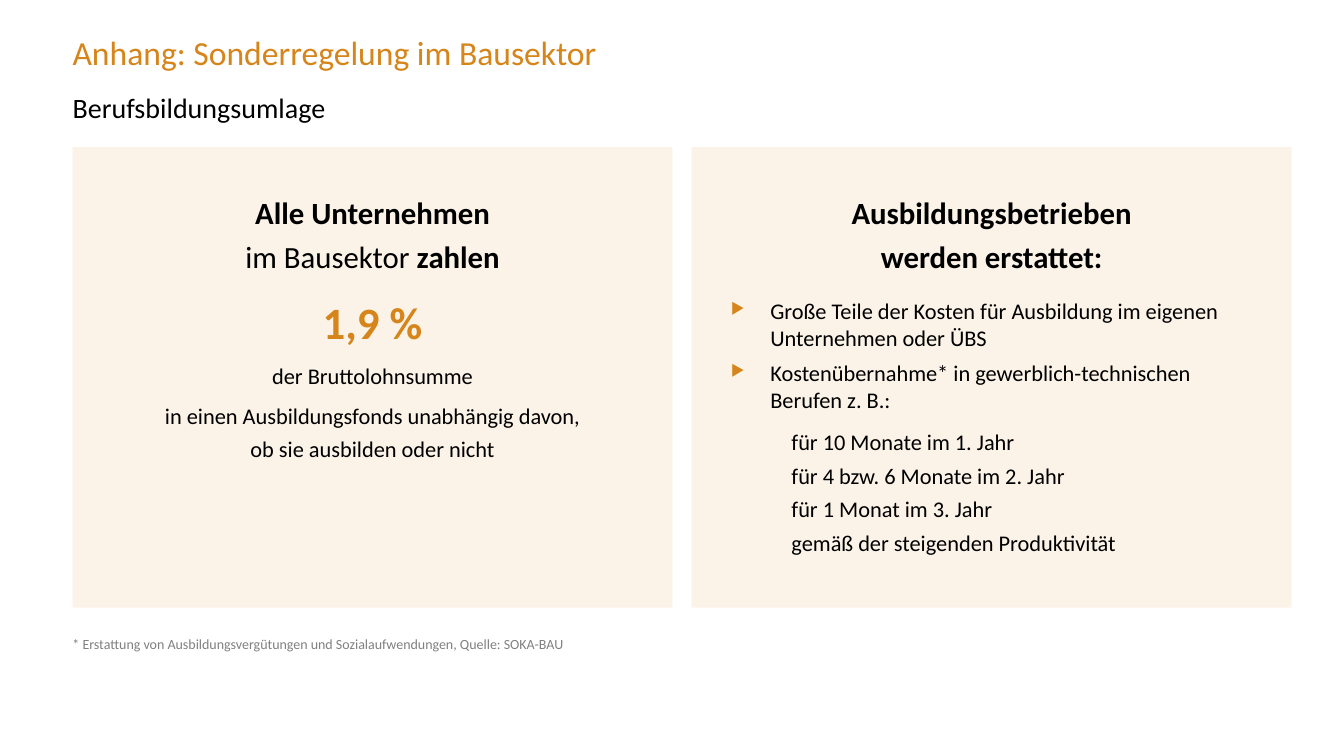
from pptx import Presentation
from pptx.dml.color import RGBColor
from pptx.enum.shapes import MSO_SHAPE
from pptx.enum.text import MSO_ANCHOR, PP_ALIGN
from pptx.oxml import parse_xml
from pptx.oxml.ns import nsdecls
from pptx.util import Inches, Pt

FONT = "Calibri"
ORANGE, BLACK, GREY, CREAM = "D6851B", "000000", "808080", "FBF3E8"

STYLES = {
    "title": dict(size=24, color=ORANGE),
    "subtitle": dict(size=20),
    "footnote": dict(size=10, color=GREY),
    "heading": dict(size=22, align=PP_ALIGN.CENTER, spacing=1.2),
    "figure": dict(size=32, color=ORANGE, align=PP_ALIGN.CENTER, spacing=1.2, before=6),
    "centered": dict(size=16, align=PP_ALIGN.CENTER, spacing=1.2, before=6),
    "first bullet": dict(size=16, bullet=True, before=15.7),
    "bullet": dict(size=16, bullet=True, before=6),
    "months": dict(size=16, indent=0.6, spacing=Pt(24), before=6),
}

HEADERS = [
    ((0.72, 0.32, 9.84, 0.49), 0, 0, "title", "Anhang: Sonderregelung im Bausektor"),
    ((0.72, 0.9, 12.09, 0.48), 0, 0, "subtitle", "Berufsbildungsumlage"),
    ((0.62, 6.26, 7.99, 0.27), 0.1, 0.05, "footnote",
     "* Erstattung von Ausbildungsvergütungen und Sozialaufwendungen, Quelle: SOKA-BAU"),
]

CARDS = [
    [
        ("heading", [("Alle Unternehmen\n", True), ("im Bausektor ", False), ("zahlen", True)]),
        ("figure", [("1,9 %", True)]),
        ("centered", [("der Bruttolohnsumme", False)]),
        ("centered", [("in einen Ausbildungsfonds unabhängig davon,\nob sie ausbilden oder nicht", False)]),
    ],
    [
        ("heading", [("Ausbildungsbetrieben\nwerden erstattet:", True)]),
        ("first bullet", [("Große Teile der Kosten für Ausbildung im eigenen Unternehmen oder ÜBS", False)]),
        ("bullet", [("Kostenübernahme* in gewerblich-technischen Berufen z. B.:", False)]),
        ("months", [("für 10 Monate im 1. Jahr\nfür 4 bzw. 6 Monate im 2. Jahr\n"
                     "für 1 Monat im 3. Jahr\ngemäß der steigenden Produktivität", False)]),
    ],
]

CARD_LEFT, CARD_TOP, CARD_WIDTH, CARD_HEIGHT, CARD_GAP = 0.72, 1.46, 5.95, 4.57, 0.19
CARD_INSET = 0.39
BULLET_INDENT = 0.39


def rgb(color):
    return RGBColor.from_string(color)


def add_bullet(paragraph):
    properties = paragraph._p.get_or_add_pPr()
    properties.set("marL", str(Inches(BULLET_INDENT)))
    properties.set("indent", str(-Inches(BULLET_INDENT)))
    for element in (
        f'<a:buClr {nsdecls("a")}><a:srgbClr val="{ORANGE}"/></a:buClr>',
        f'<a:buSzPct {nsdecls("a")} val="70000"/>',
        f'<a:buChar {nsdecls("a")} char="▶"/>',
    ):
        properties.append(parse_xml(element))


def write_paragraph(paragraph, runs, size, color=BLACK, align=PP_ALIGN.LEFT,
                    spacing=1.0, before=0, indent=0, bullet=False):
    paragraph.alignment = align
    paragraph.line_spacing = spacing
    paragraph.space_before = Pt(before)
    if indent:
        paragraph._p.get_or_add_pPr().set("marL", str(Inches(indent)))
    if bullet:
        add_bullet(paragraph)
    for text, bold in runs:
        for number, line in enumerate(text.split("\n")):
            if number:
                paragraph.add_line_break()
            if line:
                run = paragraph.add_run()
                run.text = line
                run.font.name = FONT
                run.font.size = Pt(size)
                run.font.bold = bold
                run.font.color.rgb = rgb(color)


def fill_frame(frame, paragraphs, inset_x, inset_y):
    frame.word_wrap = True
    frame.vertical_anchor = MSO_ANCHOR.TOP
    frame.margin_left = frame.margin_right = Inches(inset_x)
    frame.margin_top = frame.margin_bottom = Inches(inset_y)
    for number, (style, runs) in enumerate(paragraphs):
        paragraph = frame.add_paragraph() if number else frame.paragraphs[0]
        write_paragraph(paragraph, runs, **STYLES[style])


presentation = Presentation()
presentation.slide_width, presentation.slide_height = Inches(13.33), Inches(7.5)
slide = presentation.slides.add_slide(presentation.slide_layouts[6])

for place, inset_x, inset_y, style, text in HEADERS:
    header = slide.shapes.add_textbox(*map(Inches, place))
    fill_frame(header.text_frame, [(style, [(text, False)])], inset_x, inset_y)

for column, paragraphs in enumerate(CARDS):
    left = CARD_LEFT + column * (CARD_WIDTH + CARD_GAP)
    card = slide.shapes.add_shape(
        MSO_SHAPE.RECTANGLE, *map(Inches, (left, CARD_TOP, CARD_WIDTH, CARD_HEIGHT)))
    card.shadow.inherit = False
    card.fill.solid()
    card.fill.fore_color.rgb = rgb(CREAM)
    card.line.fill.background()
    fill_frame(card.text_frame, paragraphs, CARD_INSET, CARD_INSET)

presentation.save("out.pptx")
